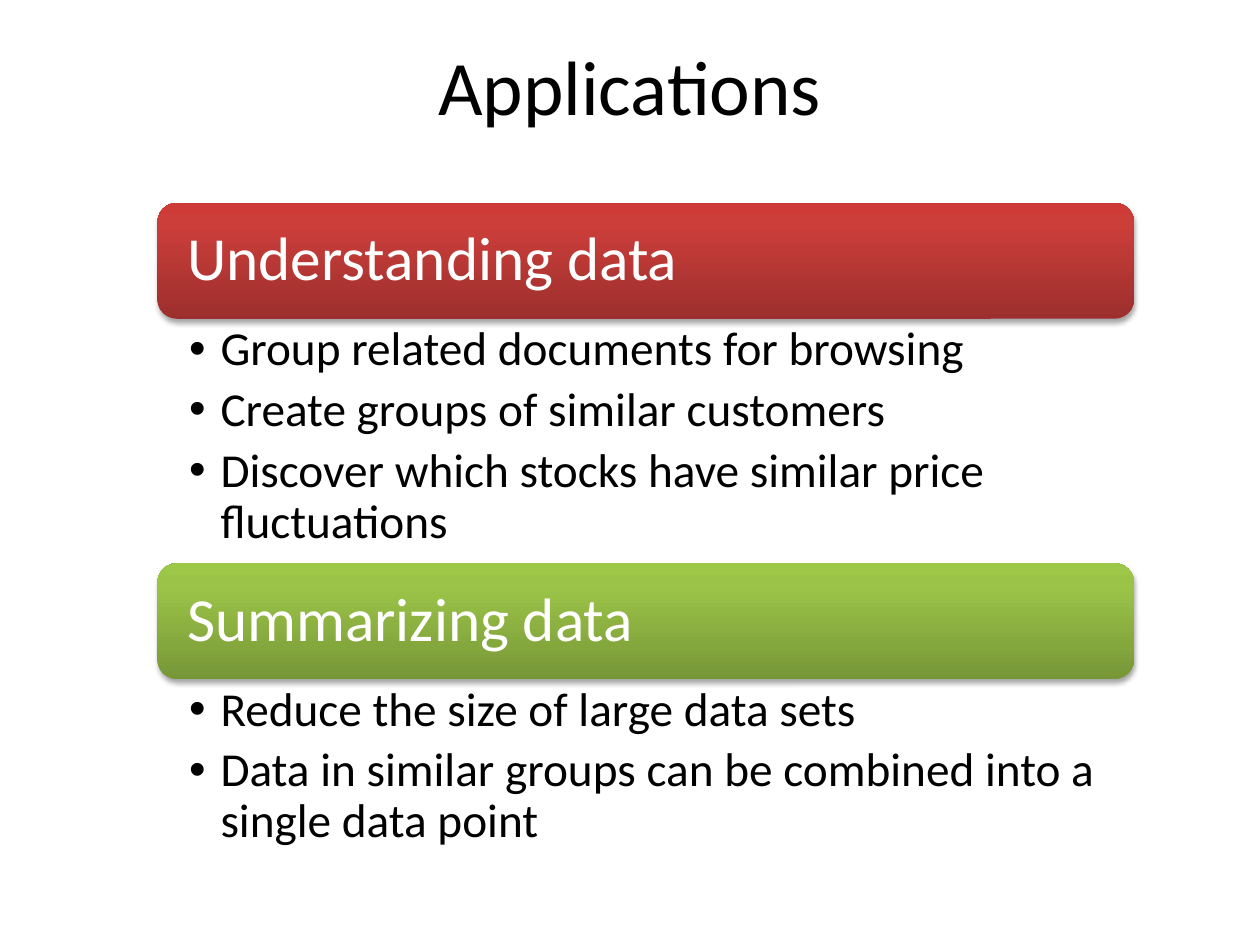
from dataclasses import dataclass

from lxml import etree
from pptx import Presentation
from pptx.dml.color import RGBColor
from pptx.enum.shapes import MSO_SHAPE
from pptx.enum.text import MSO_ANCHOR, MSO_AUTO_SIZE, PP_ALIGN
from pptx.oxml import parse_xml
from pptx.oxml.ns import nsdecls, qn
from pptx.util import Pt

ROUND_RECT = MSO_SHAPE.ROUNDED_RECTANGLE
MIDDLE, TOP = MSO_ANCHOR.MIDDLE, MSO_ANCHOR.TOP
LEFT, CENTER = PP_ALIGN.LEFT, PP_ALIGN.CENTER
NO_AUTOFIT = MSO_AUTO_SIZE.NONE

PX = 9144  # EMU in one px, 100 px to the inch
TWO_CONTENT_LAYOUT = 3


@dataclass(frozen=True)
class Theme:
    font: str = "Calibri"
    text: str = "000000"
    banner_text: str = "FFFFFF"
    shadow: str = "000000"
    # Gradient stops at 0, 80 and 100 percent, from bottom to top
    red: tuple = ("9C2F2D", "CB3E3A", "CE3B37")
    green: tuple = ("779737", "9BC348", "9DC746")
    title_size: int = 44
    banner_size: int = 35
    bullet_size: int = 27


THEME = Theme()
BANNER_HEIGHT = 92
SECTIONS = [
    ((125, 161, 775, 285), "Understanding data", THEME.red, [
        "Group related documents for browsing",
        "Create groups of similar customers",
        "Discover which stocks have similar price fluctuations",
    ]),
    ((125, 447, 775, 234), "Summarizing data", THEME.green, [
        "Reduce the size of large data sets",
        "Data in similar groups can be combined into a single data point",
    ]),
]


def px(*lengths):
    return [length * PX for length in lengths]


def place(shape, box):
    shape.left, shape.top, shape.width, shape.height = px(*box)


def set_frame(frame, anchor, insets):
    frame.word_wrap = True
    frame.auto_size = NO_AUTOFIT
    frame.vertical_anchor = anchor
    (frame.margin_left, frame.margin_top,
     frame.margin_right, frame.margin_bottom) = px(*insets)


def set_font(paragraph, size, color):
    paragraph.font.name = THEME.font
    paragraph.font.size = Pt(size)
    paragraph.font.color.rgb = RGBColor.from_string(color)


def add_gradient_and_shadow(shape, colors):
    shape.line.fill.background()
    stops = "".join(
        f'<a:gs pos="{percent * 1000}"><a:srgbClr val="{color}"/></a:gs>'
        for percent, color in zip((0, 80, 100), colors))
    gradient = parse_xml(
        f'<a:gradFill {nsdecls("a")} rotWithShape="1"><a:gsLst>{stops}</a:gsLst>'
        '<a:lin ang="16200000" scaled="0"/></a:gradFill>')
    shadow = parse_xml(
        f'<a:effectLst {nsdecls("a")}><a:outerShdw blurRad="{Pt(3.1)}" '
        f'dist="{Pt(1.8)}" dir="5400000" rotWithShape="0">'
        f'<a:srgbClr val="{THEME.shadow}"><a:alpha val="35000"/></a:srgbClr>'
        '</a:outerShdw></a:effectLst>')
    properties = shape._element.spPr
    properties.find(qn("a:prstGeom")).addnext(gradient)
    properties.find(qn("a:ln")).addnext(shadow)


def add_title(title, box, text):
    place(title, box)
    set_frame(title.text_frame, MIDDLE, (10, 5, 10, 5))
    heading = title.text_frame.paragraphs[0]
    heading.text = text
    heading.alignment = CENTER
    set_font(heading, THEME.title_size, THEME.text)


def add_banner(slide, box, text, colors):
    banner = slide.shapes.add_shape(ROUND_RECT, *px(*box))
    add_gradient_and_shadow(banner, colors)
    set_frame(banner.text_frame, MIDDLE, (19, 19, 19, 19))
    heading = banner.text_frame.paragraphs[0]
    heading.text = text
    heading.alignment = LEFT
    heading.line_spacing = 0.9
    set_font(heading, THEME.banner_size, THEME.banner_text)


def fill_bullets(body, box, points):
    place(body, box)
    frame = body.text_frame
    set_frame(frame, TOP, (25, 5, 27, 5))
    frame.text = "\n".join(points)
    for point in frame.paragraphs:
        point.line_spacing = 0.9
        point.space_before = Pt(0)
        point.space_after = Pt(5.4)
        properties = point._p.get_or_add_pPr()
        properties.set("marL", str(25 * PX))
        properties.set("indent", str(-25 * PX))
        etree.SubElement(properties, qn("a:buChar"), char="•")
        set_font(point, THEME.bullet_size, THEME.text)


def add_section(slide, body, box, heading, colors, points):
    left, top, width, height = box
    add_banner(slide, (left, top, width, BANNER_HEIGHT), heading, colors)
    list_box = (left, top + BANNER_HEIGHT, width, height - BANNER_HEIGHT)
    fill_bullets(body, list_box, points)


def main():
    presentation = Presentation()
    presentation.slide_width, presentation.slide_height = px(1000, 750)
    slide = presentation.slides.add_slide(
        presentation.slide_layouts[TWO_CONTENT_LAYOUT])

    # Title
    add_title(slide.shapes.title, (50, 17, 900, 100), "Applications")

    # One banner with its list for each application
    for index, section in enumerate(SECTIONS, start=1):
        add_section(slide, slide.placeholders[index], *section)

    presentation.save("out.pptx")


if __name__ == "__main__":
    main()
